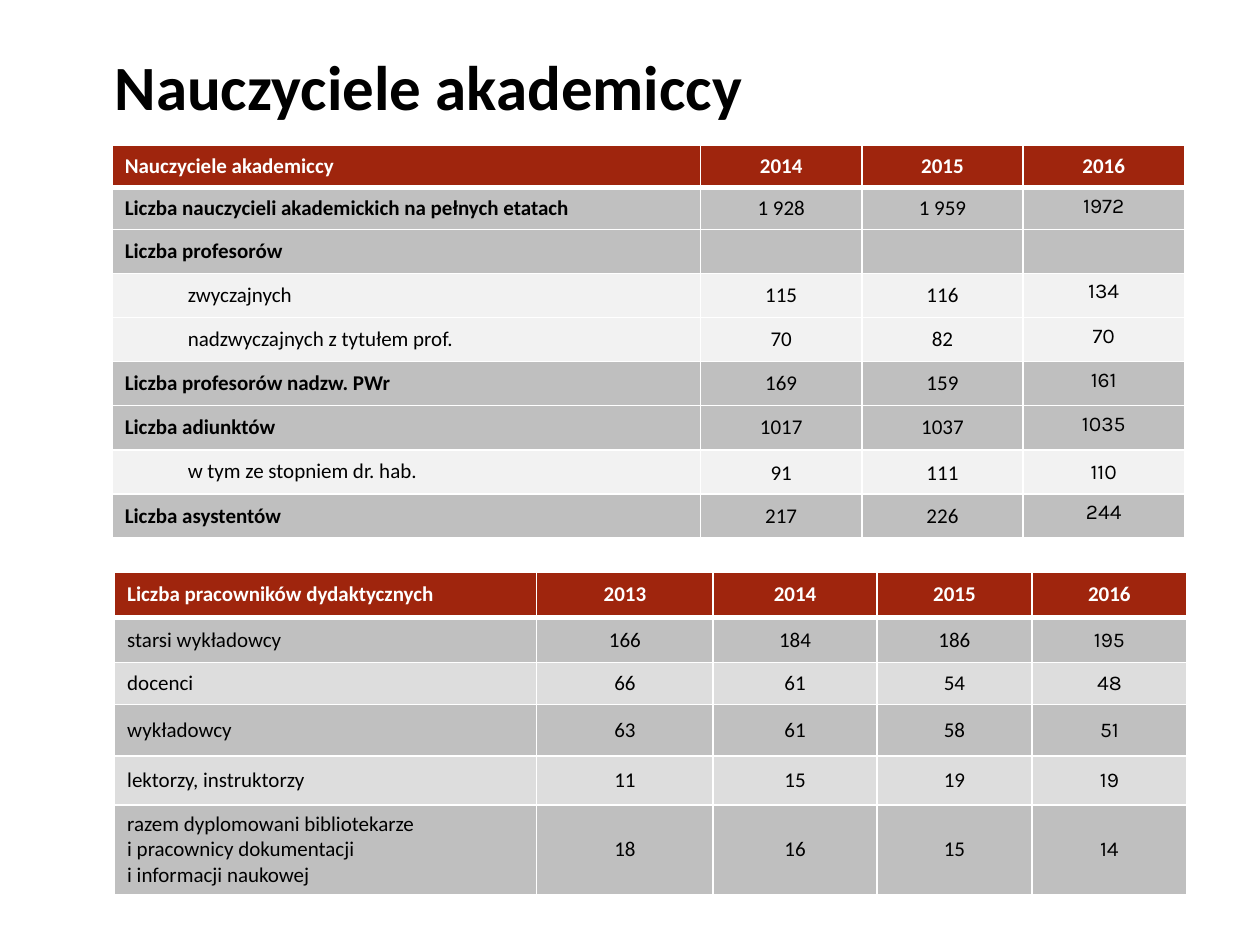
from dataclasses import dataclass

from lxml import etree
from pptx import Presentation
from pptx import util as u
from pptx.dml.color import RGBColor
from pptx.enum import text as t
from pptx.oxml.ns import qn


@dataclass(frozen=True)
class Theme:
    black: str = "000000"
    white: str = "FFFFFF"
    red: str = "9F250D"
    gray: str = "C0C0C0"
    mid: str = "BFBFBF"
    soft: str = "DDDDDD"
    pale: str = "F2F2F2"
    font: str = "Calibri"
    last: str = "Karla"  # font of the newest year
    head: int = 36
    body: int = 12


TH = Theme()

# Each row: height, fill, label style, label, yearly values
STAFF = [
    (0.34, TH.red, "head", "Nauczyciele akademiccy", ["2014", "2015", "2016"]),
    (0.33, TH.gray, "bold", "Liczba nauczycieli akademickich na pełnych etatach",
     ["1 928", "1 959", "1972"]),
    (0.35, TH.mid, "bold", "Liczba profesorów", ["", "", ""]),
    (0.35, TH.pale, "sub", "zwyczajnych", ["115", "116", "134"]),
    (0.35, TH.pale, "sub", "nadzwyczajnych z tytułem prof.", ["70", "82", "70"]),
    (0.35, TH.mid, "bold", "Liczba profesorów nadzw. PWr", ["169", "159", "161"]),
    (0.35, TH.mid, "bold", "Liczba adiunktów", ["1017", "1037", "1035"]),
    (0.35, TH.pale, "loose", "w tym ze stopniem dr. hab.", ["91", "111", "110"]),
    (0.35, TH.mid, "bold", "Liczba asystentów", ["217", "226", "244"]),
]
TEACH = [
    (0.36, TH.red, "head", "Liczba pracowników dydaktycznych",
     ["2013", "2014", "2015", "2016"]),
    (0.36, TH.gray, "plain", "starsi wykładowcy", ["166", "184", "186", "195"]),
    (0.33, TH.soft, "plain", "docenci", ["66", "61", "54", "48"]),
    (0.41, TH.gray, "plain", "wykładowcy", ["63", "61", "58", "51"]),
    (0.39, TH.soft, "plain", "lektorzy, instruktorzy", ["11", "15", "19", "19"]),
    (0.69, TH.mid, "plain",
     """razem dyplomowani bibliotekarze
i pracownicy dokumentacji
i informacji naukowej""", ["18", "16", "15", "14"]),
]


def put(obj, **vals):
    """Set attributes from a dict of format values."""
    for name, val in vals.items():
        setattr(obj, name, val)


def style(para, size, color, bold, font=TH.font):
    put(para.font, name=font, size=u.Pt(size), bold=bold)
    para.font.color.rgb = RGBColor.from_string(color)


def edge(cell, top, low):
    """Draw white cell borders; top and low are widths in points."""
    props = cell._tc.get_or_add_tcPr()
    for side, wide in (("L", 1), ("R", 1), ("T", top), ("B", low)):
        line = etree.SubElement(props, qn("a:ln" + side), w=str(u.Pt(wide)))
        fill = etree.SubElement(line, qn("a:solidFill"))
        etree.SubElement(fill, qn("a:srgbClr"), val=TH.white)


def fill_cell(cell, words, tone, kind, first, last, anchor):
    cell.fill.solid()
    cell.fill.fore_color.rgb = RGBColor.from_string(tone)
    cell.vertical_anchor = anchor
    para = cell.text_frame.paragraphs[0]
    para.text = words
    if first and kind in ("sub", "loose"):
        para.level = 1
        props = para._p.get_or_add_pPr()
        props.set("marL", str(u.Inches(0.5)))
        props.set("indent", "0")
    if not first:
        para.alignment = t.PP_ALIGN.CENTER
        if kind == "loose":
            para.line_spacing = 1.15
    head = kind == "head"
    style(para, TH.body, TH.white if head else TH.black,
          head or (first and kind == "bold"),
          TH.last if last and not head else TH.font)


def add_grid(slide, left, top, cols, rows, anchor):
    """Add a table; anchor places the values of the newest year."""
    high = sum(row[0] for row in rows)
    grid = slide.shapes.add_table(
        len(rows), len(cols), u.Inches(left), u.Inches(top),
        u.Inches(sum(cols)), u.Inches(high)).table
    for col, wide in zip(grid.columns, cols):
        col.width = u.Inches(wide)
    for r, (tall, tone, kind, label, vals) in enumerate(rows):
        grid.rows[r].height = u.Inches(tall)
        for c, words in enumerate([label, *vals]):
            cell = grid.cell(r, c)
            last = c == len(vals)
            edge(cell, 3 if r == 1 else 1, 3 if r == 0 else 1)
            fill_cell(cell, words, tone, kind, c == 0, last,
                      anchor if last and r else t.MSO_ANCHOR.MIDDLE)


def add_title(slide, words):
    title = slide.shapes.title
    put(title, left=u.Inches(0.81), top=u.Inches(0.3),
        width=u.Inches(8.75), height=u.Inches(1.01))
    frame = title.text_frame
    put(frame, text=words, word_wrap=True, margin_top=u.Inches(0.08),
        vertical_anchor=t.MSO_ANCHOR.TOP, auto_size=t.MSO_AUTO_SIZE.NONE)
    para = frame.paragraphs[0]
    para.alignment = t.PP_ALIGN.LEFT
    style(para, TH.head, TH.black, True)


def main():
    deck = Presentation()
    put(deck, slide_width=u.Inches(10), slide_height=u.Inches(7.5))
    slide = deck.slides.add_slide(deck.slide_layouts[5])
    add_title(slide, "Nauczyciele akademiccy")
    # Academic staff by rank
    add_grid(slide, 0.89, 1.15, [4.67] + [1.28] * 3, STAFF, t.MSO_ANCHOR.TOP)
    # Teaching staff
    add_grid(slide, 0.91, 4.54, [3.35, 1.4, 1.3, 1.23, 1.23], TEACH,
             t.MSO_ANCHOR.MIDDLE)
    deck.save("out.pptx")


if __name__ == "__main__":
    main()
